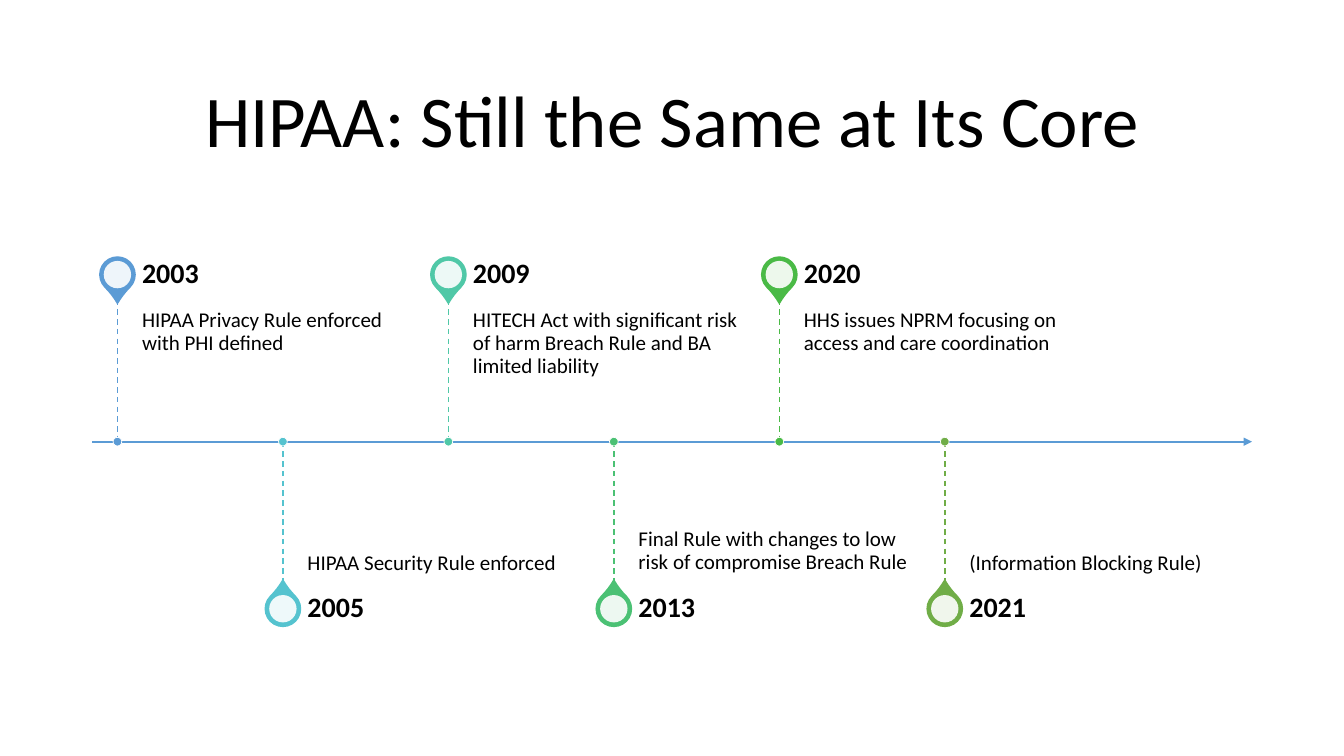
from dataclasses import dataclass

from lxml import etree
from pptx import Presentation
from pptx.dml.color import RGBColor
from pptx.enum.dml import MSO_LINE
from pptx.enum.shapes import MSO_CONNECTOR, MSO_SHAPE
from pptx.enum.text import MSO_ANCHOR, PP_ALIGN
from pptx.oxml.ns import qn
from pptx.util import Cm, Pt

DASH = MSO_LINE.DASH
STRAIGHT = MSO_CONNECTOR.STRAIGHT
DROP, OVAL = MSO_SHAPE.TEAR, MSO_SHAPE.OVAL
TOP, MIDDLE, BOTTOM = MSO_ANCHOR.TOP, MSO_ANCHOR.MIDDLE, MSO_ANCHOR.BOTTOM
LEFT, CENTER = PP_ALIGN.LEFT, PP_ALIGN.CENTER


@dataclass(frozen=True)
class Theme:
    font: str = "Calibri"
    ink: str = "000000"
    white: str = "FFFFFF"
    axis: str = "5B9BD5"
    hues: tuple = ("5B9BD5", "55C3CF", "50C8A7", "4BC174", "4ABA46", "70AD47")
    title: int = 52
    year: int = 20
    body: int = 15


EVENTS = [
    ("2003", "HIPAA Privacy Rule enforced with PHI defined"),
    ("2005", "HIPAA Security Rule enforced"),
    ("2009", "HITECH Act with significant risk of harm Breach Rule "
             "and BA limited liability"),
    ("2013", "Final Rule with changes to low risk of compromise Breach Rule"),
    ("2020", "HHS issues NPRM focusing on access and care coordination"),
    ("2021", "(Information Blocking Rule)"),
]

# Timeline measures in cm
START, END, AXIS = 2.33, 31.55, 11.13
FIRST, STEP = 2.96, 4.17
STEM, HEAD = 3.58, 1.26
GAP, WIDTH = 0.62, 6.93
PIN, HOLE, DOT = 0.89, 0.69, 0.22


def write(frame, text, *, size, font, color, bold=False, align=LEFT,
          anchor=TOP, pad=(0.25, 0.13, 0.25, 0.13)):
    """Fill a text frame; pad is left, top, right, bottom in cm."""
    frame.word_wrap = True
    frame.vertical_anchor = anchor
    (frame.margin_left, frame.margin_top,
     frame.margin_right, frame.margin_bottom) = map(Cm, pad)
    para = frame.paragraphs[0]
    para.alignment = align
    para.line_spacing = 0.9
    run = para.add_run()
    run.text = text
    run.font.name = font
    run.font.size = Pt(size)
    run.font.bold = bold
    run.font.color.rgb = RGBColor.from_string(color)


class Board:
    def __init__(self, slide, theme):
        self.shapes = slide.shapes
        self.theme = theme

    def text(self, x, y, w, h, text, **style):
        box = self.shapes.add_textbox(Cm(x), Cm(y), Cm(w), Cm(h))
        write(box.text_frame, text, font=self.theme.font,
              color=self.theme.ink, **style)

    def line(self, x1, y1, x2, y2, color, width, dash=None, arrow=False):
        line = self.shapes.add_connector(
            STRAIGHT, Cm(x1), Cm(y1), Cm(x2), Cm(y2))
        line.line.color.rgb = RGBColor.from_string(color)
        line.line.width = Pt(width)
        if dash:
            line.line.dash_style = dash
        if arrow:
            etree.SubElement(line.line._get_or_add_ln(), qn("a:tailEnd"),
                             type="triangle")
        etree.SubElement(line._element.spPr, qn("a:effectLst"))

    def mark(self, kind, x, y, size, fill, edge=None, width=1, alpha=None):
        """Draw a shape centred on x, y."""
        shape = self.shapes.add_shape(
            kind, Cm(x - size / 2), Cm(y - size / 2), Cm(size), Cm(size))
        shape.shadow.inherit = False
        shape.fill.solid()
        shape.fill.fore_color.rgb = RGBColor.from_string(fill)
        if alpha:
            tint = shape._element.spPr.find(".//" + qn("a:srgbClr"))
            etree.SubElement(tint, qn("a:alpha"), val=str(alpha * 1000))
        if edge:
            shape.line.color.rgb = RGBColor.from_string(edge)
            shape.line.width = Pt(width)
        else:
            shape.line.fill.background()
        return shape

    def event(self, x, year, note, hue, above):
        theme = self.theme
        side = -1 if above else 1
        tip = AXIS + side * STEM
        mid = tip + side * HEAD / 2
        # Pin
        drop = self.mark(DROP, x, mid, PIN, hue, hue)
        drop.adjustments[0] = 1.15
        drop.rotation = 135 if above else 315
        self.mark(OVAL, x, mid, HOLE, theme.white, alpha=90)
        # Note and year
        self.text(x + GAP, min(AXIS, tip), WIDTH, STEM, note,
                  size=theme.body, anchor=TOP if above else BOTTOM,
                  pad=(0, 0.25, 0.25, 0.41) if above else (0, 0.41, 0, 0.25))
        self.text(x + GAP, mid - HEAD / 2, WIDTH, HEAD, year, bold=True,
                  size=theme.year, anchor=MIDDLE, pad=(0, 0, 0.36, 0))
        # Stem and dot on the axis
        self.line(x, min(AXIS, tip), x, max(AXIS, tip), hue, 1, dash=DASH)
        self.mark(OVAL, x, AXIS, DOT, hue, theme.white, 0.5)


def main():
    deck = Presentation()
    deck.slide_width, deck.slide_height = Cm(33.87), Cm(19.05)
    theme = Theme()
    board = Board(deck.slides.add_slide(deck.slide_layouts[6]), theme)

    # Title
    board.text(START, 1.55, END - START, 3.15,
               "HIPAA: Still the Same at Its Core",
               size=theme.title, align=CENTER, anchor=MIDDLE)

    # Timeline, events alternating above and below the axis
    board.line(START, AXIS, END, AXIS, theme.axis, 1.5, arrow=True)
    for i, ((year, note), hue) in enumerate(zip(EVENTS, theme.hues)):
        board.event(FIRST + i * STEP, year, note, hue, above=i % 2 == 0)

    deck.save("out.pptx")


if __name__ == "__main__":
    main()
